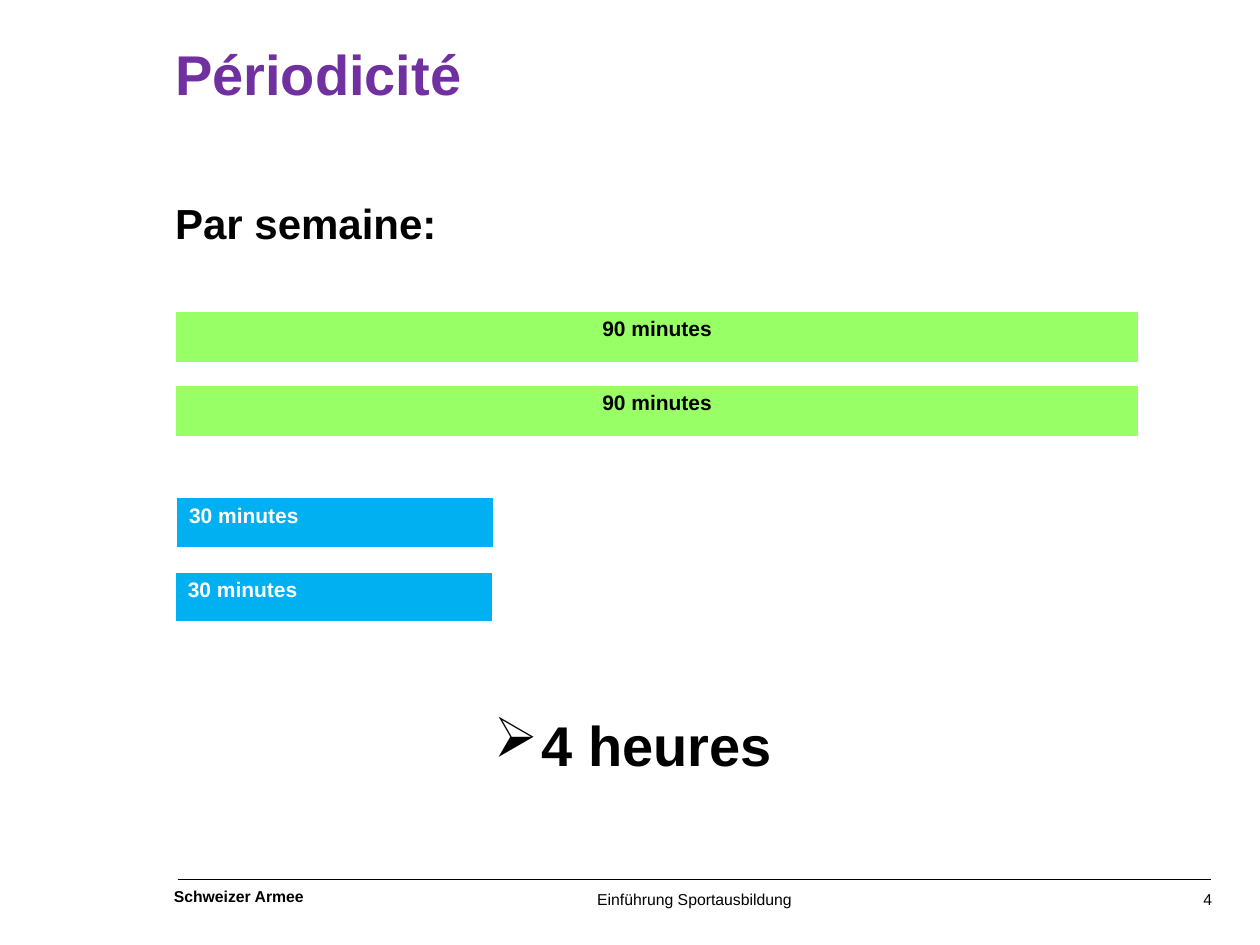
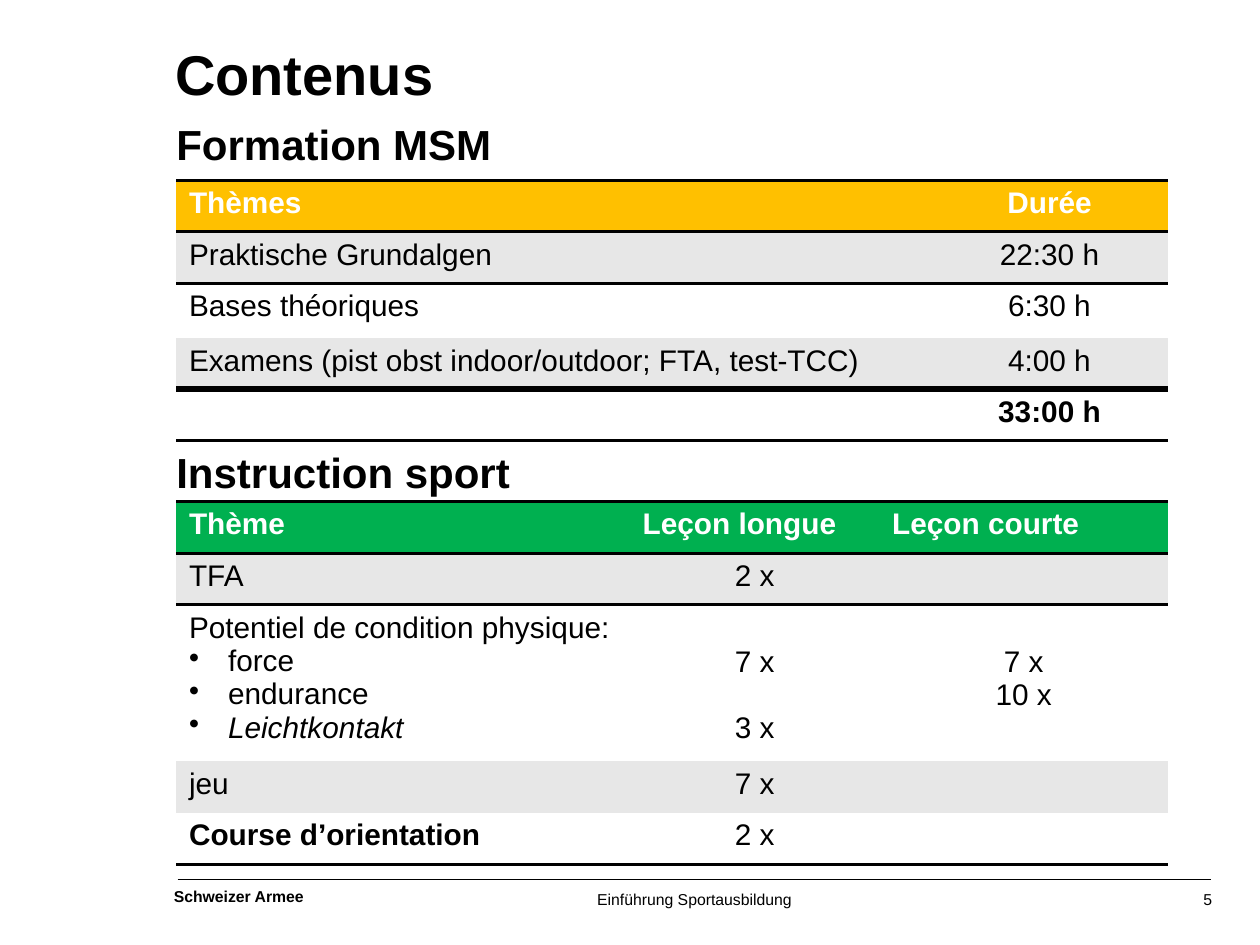
from lxml import etree
from pptx import Presentation
from pptx.dml.color import RGBColor
from pptx.enum.shapes import MSO_CONNECTOR
from pptx.enum.text import MSO_ANCHOR, MSO_AUTO_SIZE, PP_ALIGN
from pptx.oxml.ns import qn
from pptx.util import Inches, Pt

LEFT, MID, RIGHT = PP_ALIGN.LEFT, PP_ALIGN.CENTER, PP_ALIGN.RIGHT
TOP, FIXED = MSO_ANCHOR.TOP, MSO_AUTO_SIZE.NONE
LINE = MSO_CONNECTOR.STRAIGHT

BLACK = RGBColor(0, 0, 0)
WHITE = RGBColor(255, 255, 255)
PURPLE = RGBColor(0x70, 0x30, 0xA0)
LIME = RGBColor(0x99, 0xFF, 0x66)
BLUE = RGBColor(0x00, 0xB0, 0xF0)
GOLD = RGBColor(0xFF, 0xC0, 0x00)
GREEN = RGBColor(0x00, 0xB0, 0x50)
GREY = RGBColor(0xE7, 0xE7, 0xE7)

FONT = "Arial"
EDGE = 1.39
ROW = 0.41
PLAIN = "{2D5ABB26-0587-4C30-8999-92F81FD0307C}"

THEMES = [
    ["Thèmes", "Durée"],
    ["Praktische Grundalgen", "22:30 h"],
    ["Bases théoriques", "6:30 h"],
    ["Examens (pist obst indoor/outdoor; FTA, test-TCC)", "4:00 h"],
    ["", "33:00 h"],
]
SPORT = [
    ["Thème", "Leçon longue", "Leçon courte"],
    ["TFA", "2 x", ""],
    ["Potentiel de condition physique:\nforce\nendurance\nLeichtkontakt",
     "7 x\n3 x", "7 x\n10 x"],
    ["jeu", "7 x", ""],
    ["Course d’orientation", "2 x", ""],
]


def style(par, size, color=BLACK, bold=False, align=LEFT):
    """Align a paragraph and format its runs."""
    par.alignment = align
    for run in par.runs:
        font = run.font
        font.name, font.size, font.bold = FONT, Pt(size), bold
        font.color.rgb = color


def bullet(par, mark, indent):
    """Give a paragraph a hanging bullet."""
    props = par._p.get_or_add_pPr()
    props.set("marL", str(Inches(indent)))
    props.set("indent", str(-Inches(indent)))
    etree.SubElement(props, qn("a:buChar")).set("char", mark)


def bare(frame):
    """Fix a text frame at its size, with no insets."""
    frame.word_wrap, frame.auto_size = True, FIXED
    frame.vertical_anchor = TOP
    frame.margin_left = frame.margin_right = 0
    frame.margin_top = frame.margin_bottom = 0


def label(slide, box, text, size, bold=False, align=LEFT):
    """Add one line of text and return its paragraph."""
    frame = slide.shapes.add_textbox(*map(Inches, box)).text_frame
    bare(frame)
    frame.text = text
    style(frame.paragraphs[0], size, bold=bold, align=align)
    return frame.paragraphs[0]


def border(cell, color, **widths):
    """Draw the given sides (L, R, T, B) of a cell, in points."""
    props = cell._tc.get_or_add_tcPr()
    sides = [side for side in "LRTB" if side in widths]
    for place, side in enumerate(sides):
        line = etree.Element(qn("a:ln" + side), w=str(Pt(widths[side])))
        fill = etree.SubElement(line, qn("a:solidFill"))
        etree.SubElement(fill, qn("a:srgbClr")).set("val", str(color))
        props.insert(place, line)


def grid(slide, left, top, cols, rows):
    """Add a table without any preset style."""
    table = slide.shapes.add_table(
        len(rows), len(cols), Inches(left), Inches(top),
        Inches(sum(cols)), Inches(sum(rows))).table
    table.first_row = table.horz_banding = False
    table._tbl.tblPr.find(qn("a:tableStyleId")).text = PLAIN
    for col, width in zip(table.columns, cols):
        col.width = Inches(width)
    for row, height in zip(table.rows, rows):
        row.height = Inches(height)
    return table


def paint(cell, text, fill, size, color=BLACK, bold=False, align=LEFT):
    """Fill a cell and set its text, one paragraph a line."""
    cell.fill.solid()
    cell.fill.fore_color.rgb = fill
    cell.text = text
    for par in cell.text_frame.paragraphs:
        style(par, size, color, bold, align)


def bar(slide, left, top, width, text, fill, color, align, base):
    """Add a lesson bar as a table of one cell."""
    cell = grid(slide, left, top, [width], [ROW]).cell(0, 0)
    paint(cell, text, fill, 12, color, True, align)
    border(cell, WHITE, L=1, R=1, T=1, B=base)


def plan(slide, left, top, cols, rows, data, tint, rules, heads):
    """Add a banded table with black rules above the given rows."""
    table = grid(slide, left, top, cols, rows)
    for r, texts in enumerate(data):
        widths = {side: rules[n] for side, n in (("T", r), ("B", r + 1))
                  if n in rules}
        for c, text in enumerate(texts):
            cell = table.cell(r, c)
            if r == 0:
                paint(cell, text, tint, 17, WHITE, True, heads[c])
            else:
                paint(cell, text, GREY if r % 2 else WHITE, 17,
                      bold=r == len(data) - 1 and text in BOLD,
                      align=MID if c else LEFT)
            border(cell, BLACK, **widths)
    return table


BOLD = ("33:00 h", "Course d’orientation")


def footer(slide, number):
    """Add the rule and the three footer texts."""
    rule = slide.shapes.add_connector(
        LINE, Inches(1.41), Inches(6.98), Inches(9.61), Inches(6.98))
    rule.line.color.rgb = BLACK
    rule.line.width = Pt(0.75)
    etree.SubElement(rule._element.spPr, qn("a:effectLst"))
    label(slide, (1.38, 7.04, 1.5, 0.15), "Schweizer Armee", 9, True)
    label(slide, (4.74, 7.06, 2, 0.15), "Einführung Sportausbildung", 9)
    label(slide, (9.12, 7.06, 0.5, 0.15), str(number), 9, align=RIGHT)


def page(deck, title, number, color=BLACK):
    """Add a slide with its title and footer."""
    slide = deck.slides.add_slide(deck.slide_layouts[5])
    head = slide.shapes.title
    head.left, head.top = Inches(EDGE), Inches(0.31)
    head.width, head.height = Inches(8.16), Inches(1.08)
    bare(head.text_frame)
    head.text_frame.text = title
    style(head.text_frame.paragraphs[0], 32, color, True)
    footer(slide, number)
    return slide


def weekly(deck):
    """Build the slide on lessons per week."""
    slide = page(deck, "Périodicité", 4, PURPLE)
    label(slide, (EDGE, 1.57, 8.43, 0.4), "Par semaine:", 24, True)
    for top in (2.47, 3.06):
        bar(slide, EDGE, top, 7.65, "90 minutes", LIME, BLACK, MID, 1)
    for left, top in ((1.4, 3.95), (EDGE, 4.54)):
        bar(slide, left, top, 2.52, "30 minutes", BLUE, WHITE, LEFT, 3)
    total = label(slide, (3.92, 5.64, 3.06, 0.54), "4 heures", 32, True)
    bullet(total, "➢", 0.38)


def content(deck):
    """Build the slide with both course tables."""
    slide = page(deck, "Contenus", 5)
    label(slide, (1.4, 0.94, 5.5, 0.4), "Formation MSM", 24, True)
    plan(slide, 1.4, 1.43, [5.99, 1.88], [ROW, ROW, 0.43, ROW, ROW],
         THEMES, GOLD, {0: 2, 1: 2, 4: 4, 5: 2}, [LEFT, MID])
    label(slide, (1.4, 3.54, 5.5, 0.4), "Instruction sport", 24, True)
    table = plan(slide, 1.4, 3.98, [3.6, 1.98, 2.29],
                 [ROW, ROW, 1.24, ROW, ROW], SPORT, GREEN,
                 {0: 2, 1: 2, 5: 2}, [LEFT] * 3)
    goals, long, short = (table.cell(2, c) for c in range(3))
    parts = goals.text_frame.paragraphs[1:]
    for par in parts:
        bullet(par, "•", 0.31)
    parts[-1].runs[0].font.italic = True
    long.margin_top = short.margin_top = Inches(0.32)
    long.text_frame.paragraphs[1].space_before = Pt(19)


def main():
    """Build and save the deck."""
    deck = Presentation()
    deck.slide_width, deck.slide_height = Inches(10), Inches(7.5)
    weekly(deck)
    content(deck)
    deck.save("out.pptx")


if __name__ == "__main__":
    main()
